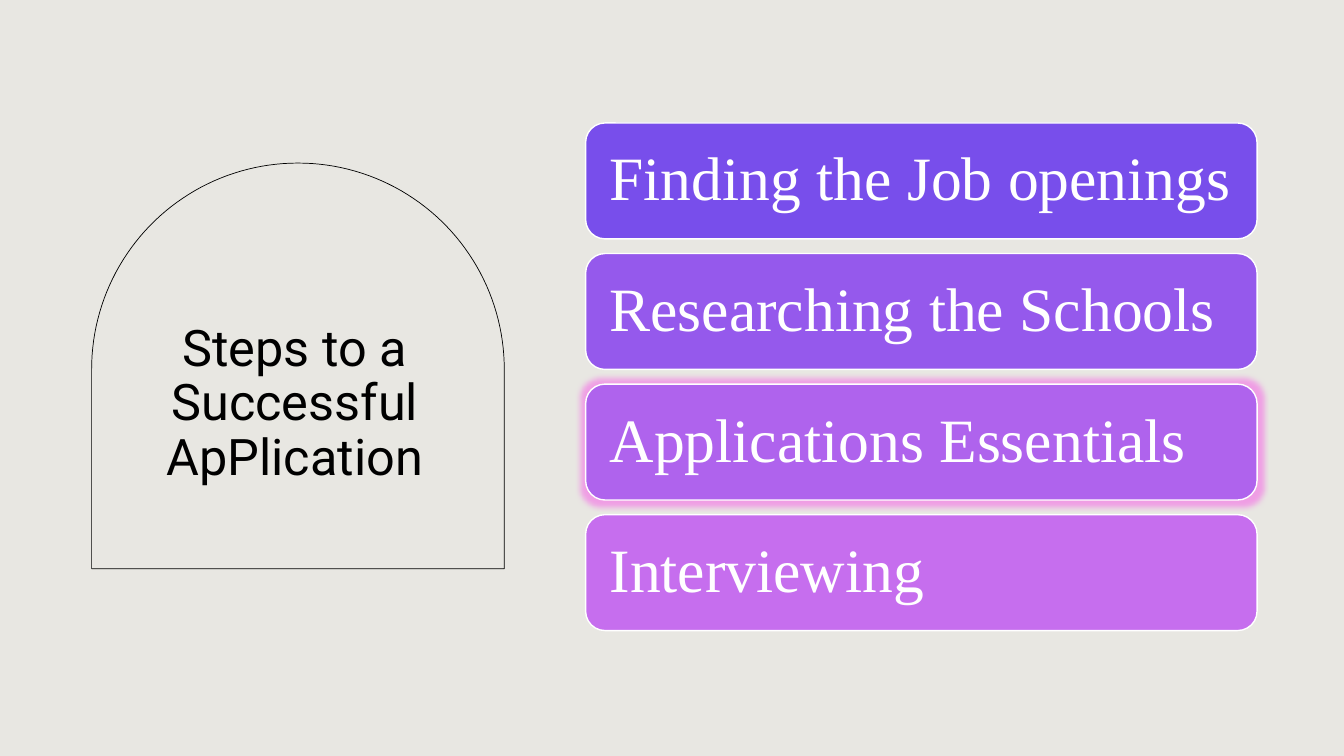
"""Build the slide on the steps to a successful application."""
from dataclasses import dataclass
from math import cos, pi, sin

from lxml import etree
from pptx import Presentation
from pptx import util as u
from pptx.dml import color
from pptx.enum import shapes, text
from pptx.oxml import ns


@dataclass(frozen=True)
class Theme:
    """Colours, fonts and type sizes of the slide."""
    back: str = "E8E7E2"
    ink: str = "000000"
    white: str = "FFFFFF"
    glow: str = "F37FE6"
    head: str = "Roboto"
    body: str = "Times New Roman"
    large: int = 44
    title: int = 36


THEME = Theme()
STEPS = (
    ("Finding the Job openings", "784EEB", False),
    ("Researching the Schools", "9559EC", False),
    ("Applications Essentials", "AF63ED", True),
    ("Interviewing", "C66EEE", False),
)
PITCH = 3.29


def rgb(code):
    """Turn a hex code into a colour."""
    return color.RGBColor.from_string(code)


def write(shape, words, font, size, tint, align):
    """Put one styled paragraph, centred in height, into a shape."""
    frame = shape.text_frame
    frame.text = words
    frame.word_wrap = True
    frame.auto_size = text.MSO_AUTO_SIZE.NONE
    frame.vertical_anchor = text.MSO_ANCHOR.MIDDLE
    para = frame.paragraphs[0]
    para.alignment = align
    para.line_spacing = 0.9
    face = para.runs[0].font
    face.name, face.size = font, u.Pt(size)
    face.color.rgb = rgb(tint)


def add_title(slide, words):
    """Place and style the title."""
    title = slide.shapes.title
    title.left, title.top = u.Cm(2.97), u.Cm(6.88)
    title.width, title.height = u.Cm(8.92), u.Cm(6.63)
    write(title, words, THEME.head, THEME.title, THEME.ink, text.PP_ALIGN.CENTER)


def add_arch(slide, left, top, width, height):
    """Outline a round-topped arch."""
    rad, turns = width / 2, 90
    curve = [(left + rad - rad * cos(pi * i / turns),
              top + rad - rad * sin(pi * i / turns)) for i in range(turns + 1)]
    base = top + height
    pen = slide.shapes.build_freeform(u.Cm(left), u.Cm(base))
    pen.add_line_segments([(u.Cm(x), u.Cm(y))
                           for x, y in curve + [(left + width, base)]])
    arch = pen.convert_to_shape()
    arch.shadow.inherit = False
    arch.fill.background()
    arch.line.color.rgb = rgb(THEME.ink)
    arch.line.width = u.Pt(0.5)


def add_glow(shape):
    """Add a soft coloured glow around a shape."""
    effects = shape._element.spPr.find(ns.qn("a:effectLst"))
    glow = etree.SubElement(effects, ns.qn("a:glow"), rad=str(u.Pt(8)))
    tint = etree.SubElement(glow, ns.qn("a:srgbClr"), val=THEME.glow)
    etree.SubElement(tint, ns.qn("a:alpha"), val="70000")


def add_step(slide, top, words, fill, lit):
    """Add one step as a rounded card."""
    card = slide.shapes.add_shape(
        shapes.MSO_SHAPE.ROUNDED_RECTANGLE,
        u.Cm(14.76), u.Cm(top), u.Cm(16.92), u.Cm(2.92))
    card.shadow.inherit = False
    card.fill.solid()
    card.fill.fore_color.rgb = rgb(fill)
    card.line.color.rgb = rgb(THEME.white)
    card.line.width = u.Pt(1)
    frame = card.text_frame
    frame.margin_left, frame.margin_right = u.Cm(0.46), u.Cm(0.3)
    write(card, words, THEME.body, THEME.large, THEME.white, text.PP_ALIGN.LEFT)
    if lit:
        add_glow(card)


def main():
    """Compose and save the slide."""
    deck = Presentation()
    deck.slide_width, deck.slide_height = u.Cm(33.87), u.Cm(19.05)
    slide = deck.slides.add_slide(deck.slide_layouts[5])
    slide.background.fill.solid()
    slide.background.fill.fore_color.rgb = rgb(THEME.back)
    add_title(slide, "Steps to a Successful ApPlication")
    add_arch(slide, 2.31, 4.11, 10.4, 10.22)
    for i, (words, fill, lit) in enumerate(STEPS):
        add_step(slide, 3.1 + i * PITCH, words, fill, lit)
    deck.save("out.pptx")


if __name__ == "__main__":
    main()
